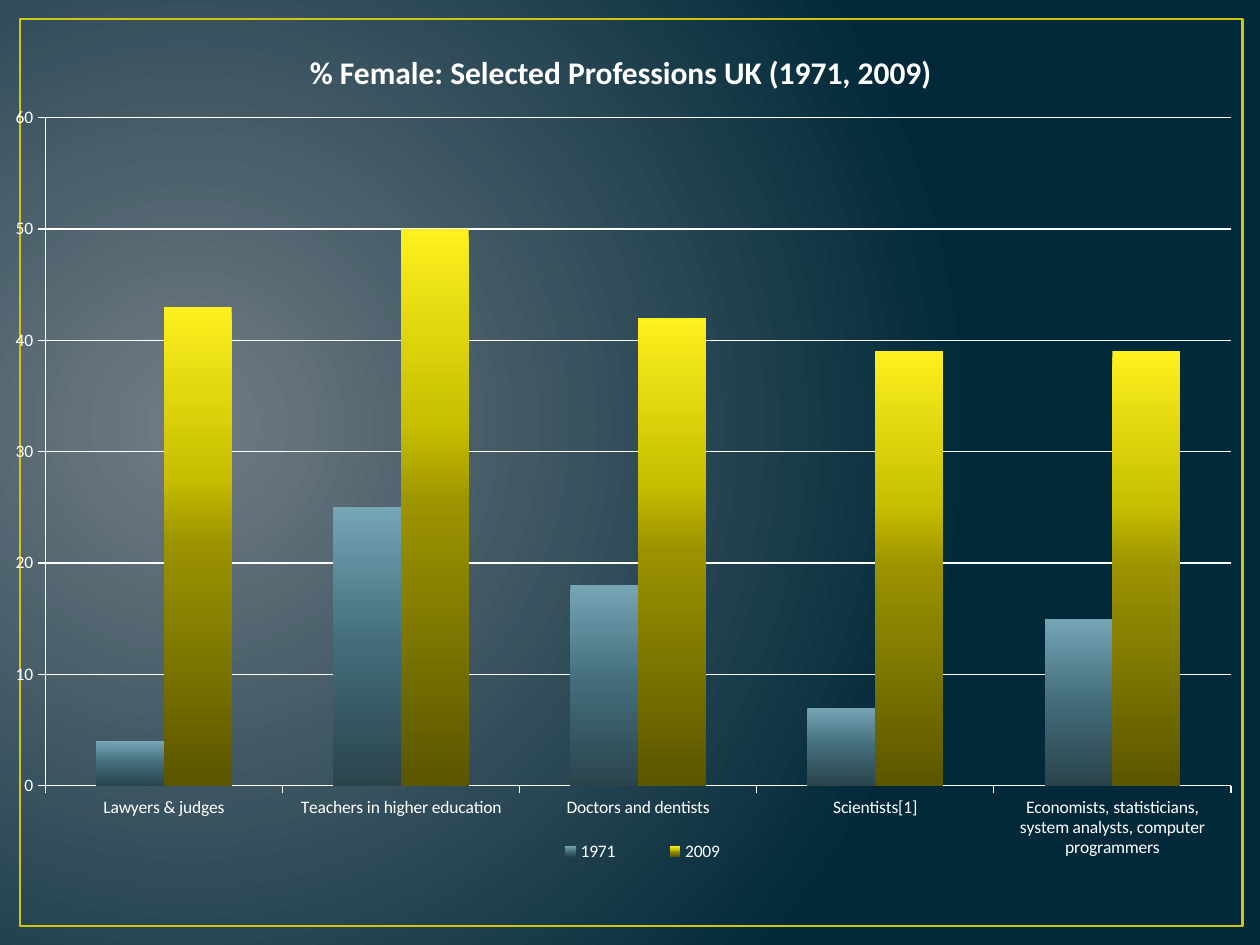
from lxml.etree import SubElement
from pptx import Presentation
from pptx.chart.data import CategoryChartData
from pptx.dml.color import RGBColor
from pptx.enum.chart import XL_CHART_TYPE, XL_LEGEND_POSITION, XL_TICK_MARK
from pptx.enum.shapes import MSO_SHAPE
from pptx.enum.text import MSO_ANCHOR, PP_ALIGN
from pptx.oxml.ns import qn
from pptx.util import Pt

FONT = "Calibri"
WHITE = "FFFFFF"
GOLD = "CFC60D"
BACKGROUND = [(0, "717C84"), (100, "01293A")]
PROFESSIONS = [
    "Lawyers & judges",
    "Teachers in higher education",
    "Doctors and dentists",
    "Scientists[1]",
    "Economists, statisticians, system analysts, computer programmers",
]
SHARES = {
    "1971": ([4, 25, 18, 7, 15], [(0, "76A5B5"), (50, "426C7A"), (100, "2B444C")]),
    "2009": ([43, 50, 42, 39, 39],
             [(0, "FCF01E"), (35, "C8BF00"), (50, "9A9200"), (100, "5B5600")]),
}


def color(value):
    return RGBColor.from_string(value)


def set_font(font, size, bold=False, fill=WHITE):
    font.name, font.size, font.bold = FONT, Pt(size), bold
    font.color.rgb = color(fill)


def write_text(frame, text, size=18, bold=False, fill=WHITE, align=PP_ALIGN.LEFT):
    frame.word_wrap = True
    frame.vertical_anchor = MSO_ANCHOR.TOP
    paragraph = frame.paragraphs[0]
    paragraph.alignment = align
    run = paragraph.add_run()
    run.text = text
    set_font(run.font, size, bold, fill)


def set_gradient(fill, owner, stops, center=None):
    fill.gradient()
    gradient = owner.find(".//" + qn("a:gradFill"))
    for child in list(gradient):
        gradient.remove(child)
    stop_list = SubElement(gradient, qn("a:gsLst"))
    for position, value in stops:
        stop = SubElement(stop_list, qn("a:gs"), pos=str(position * 1000))
        SubElement(stop, qn("a:srgbClr"), val=value)
    if center:
        circle = SubElement(gradient, qn("a:path"), attrib={"path": "circle"})
        sides = {side: str(percent * 1000) for side, percent in zip("ltrb", center)}
        SubElement(circle, qn("a:fillToRect"), attrib=sides)
    else:
        SubElement(gradient, qn("a:lin"), ang="5400000", scaled="0")


def set_layout(parent, index, box, target=None):
    for old in parent.findall(qn("c:layout")):
        parent.remove(old)
    layout = SubElement(parent, qn("c:layout"))
    parent.insert(index, layout)
    manual = SubElement(layout, qn("c:manualLayout"))
    if target:
        SubElement(manual, qn("c:layoutTarget"), val=target)
    for side in "xy":
        SubElement(manual, qn(f"c:{side}Mode"), val="edge")
    for side, value in zip("xywh", box):
        SubElement(manual, qn(f"c:{side}"), val=str(value))


def set_line(line, value, width):
    line.color.rgb = color(value)
    line.width = Pt(width)


def add_frame(slide, left, top, width, height):
    frame = slide.shapes.add_shape(
        MSO_SHAPE.RECTANGLE, Pt(left), Pt(top), Pt(width), Pt(height))
    frame.shadow.inherit = False
    frame.fill.background()
    set_line(frame.line, GOLD, 1.5)


def add_title(slide, left, top, width, height):
    title = slide.shapes.title
    title.left, title.top = Pt(left), Pt(top)
    title.width, title.height = Pt(width), Pt(height)
    write_text(title.text_frame, "% Female: Selected Professions UK (1971, 2009)", bold=True)


def add_share_chart(slide, left, top, width, height):
    data = CategoryChartData()
    data.categories = PROFESSIONS
    for year, (values, _) in SHARES.items():
        data.add_series(year, values)
    chart = slide.shapes.add_chart(
        XL_CHART_TYPE.COLUMN_CLUSTERED, Pt(left), Pt(top), Pt(width), Pt(height), data).chart
    set_font(chart.font, 10)
    chart.has_title = False

    plot = chart.plots[0]
    plot.gap_width, plot.overlap, plot.vary_by_categories = 150, 0, False
    for series, (_, stops) in zip(plot.series, SHARES.values()):
        set_gradient(series.format.fill, series._element, stops)
    set_layout(plot._element.getparent(), 0, (0.036, 0.025, 0.941, 0.865), "inner")

    for axis in (chart.category_axis, chart.value_axis):
        axis.major_tick_mark = XL_TICK_MARK.OUTSIDE
        set_line(axis.format.line, WHITE, 0.75)
    shares = chart.value_axis
    shares.minimum_scale, shares.maximum_scale, shares.major_unit = 0, 60, 10
    shares.has_major_gridlines = True
    set_line(shares.major_gridlines.format.line, WHITE, 0.75)

    chart.has_legend = True
    chart.legend.position = XL_LEGEND_POSITION.RIGHT
    chart.legend.include_in_layout = False
    set_layout(chart.legend._element, 1, (0.41, 0.95, 0.2, 0.05))


def main():
    deck = Presentation()
    deck.slide_width, deck.slide_height = Pt(720), Pt(540)
    slide = deck.slides.add_slide(deck.slide_layouts[5])
    set_gradient(slide.background.fill, slide._element, BACKGROUND, (15, 50, 85, 60))
    add_frame(slide, 11.5, 10.8, 698.4, 518.4)
    add_share_chart(slide, 0, 56.2, 720, 441.4)
    add_title(slide, 169.9, 26.6, 414.7, 28.8)
    deck.save("out.pptx")


if __name__ == "__main__":
    main()
